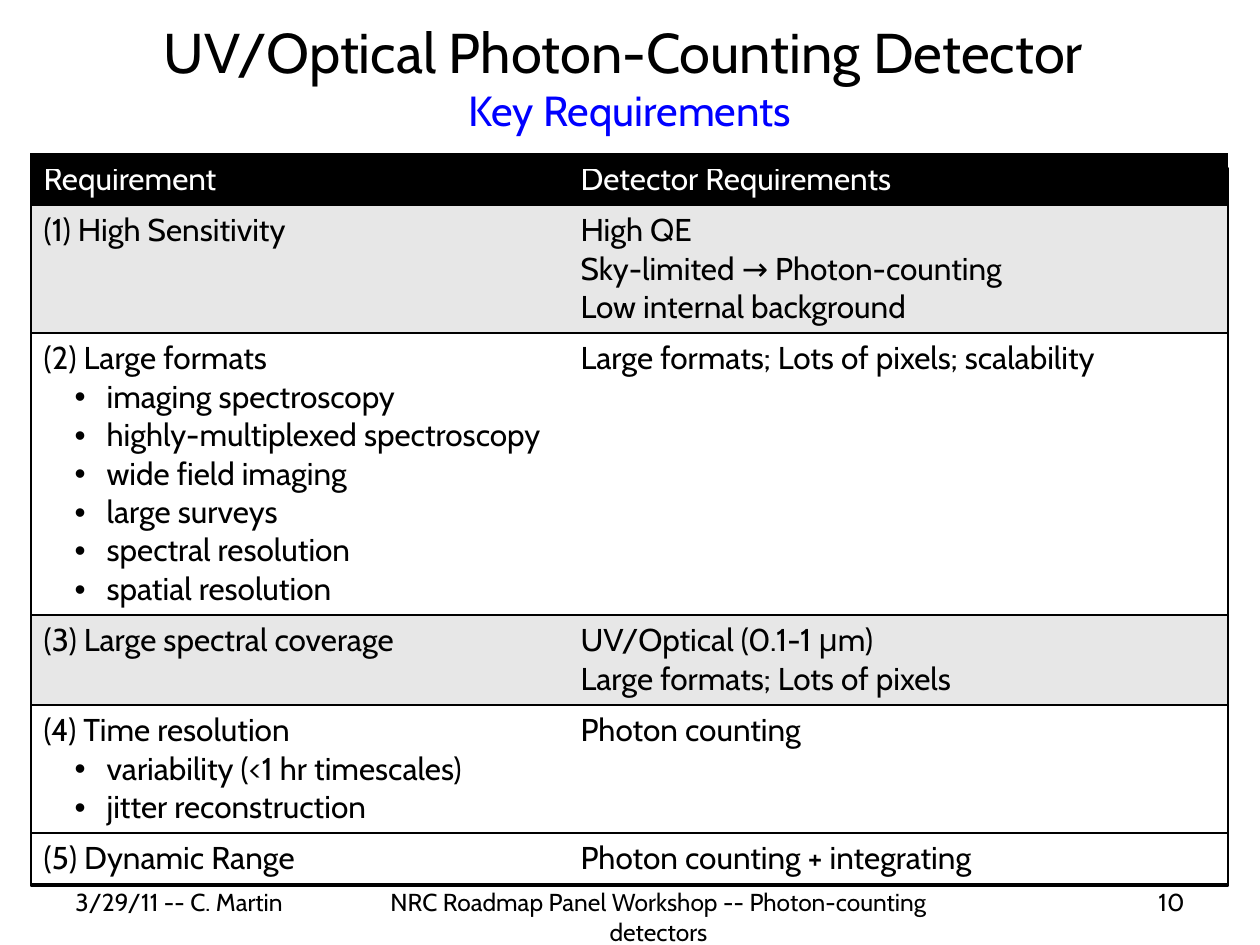
import pptx
import pptx.dml.color
import pptx.enum.shapes
import pptx.enum.text
import pptx.oxml.ns
import pptx.util
import lxml.etree

EMU_PER_PX = 914400 / 126
FONT = "Cabin"
COLORS = {"ink": "000000", "paper": "FFFFFF", "band": "E7E7E7", "accent": "0000FF"}
ALIGN = pptx.enum.text.PP_ALIGN
ANCHOR = pptx.enum.text.MSO_ANCHOR

HEADER = ("Requirement", "Detector Requirements")
# Height, heading, bullets, detector requirements
REQUIREMENTS = [
    (128, "(1) High Sensitivity", [],
     ["High QE", "Sky-limited → Photon-counting", "Low internal background"]),
    (282, "(2) Large formats",
     ["imaging spectroscopy", "highly-multiplexed spectroscopy", "wide field imaging",
      "large surveys", "spectral resolution", "spatial resolution"],
     ["Large formats; Lots of pixels; scalability"]),
    (90, "(3) Large spectral coverage", [],
     ["UV/Optical (0.1-1 μm)", "Large formats; Lots of pixels"]),
    (128, "(4) Time resolution",
     ["variability (<1 hr timescales)", "jitter reconstruction"], ["Photon counting"]),
    (51, "(5) Dynamic Range", [], ["Photon counting + integrating"]),
]


def px(length):
    return pptx.util.Emu(round(length * EMU_PER_PX))


def rgb(name):
    return pptx.dml.color.RGBColor.from_string(COLORS[name])


def add_element(parent, tag, **attributes):
    element = lxml.etree.SubElement(parent, pptx.oxml.ns.qn(tag))
    for name, value in attributes.items():
        element.set(name, str(value))
    return element


def write_text(paragraph, text, size=18, color="ink", align=ALIGN.LEFT, bullet=False):
    paragraph.alignment = align
    run = paragraph.add_run()
    run.text = text
    run.font.name = FONT
    run.font.size = pptx.util.Pt(size)
    run.font.color.rgb = rgb(color)
    if bullet:
        properties = paragraph._p.get_or_add_pPr()
        properties.set("marL", str(px(63)))
        properties.set("indent", str(px(-32)))
        add_element(properties, "a:buFont", typeface="Arial")
        add_element(properties, "a:buChar", char="•")


def add_text_frame(slide, box, anchor=ANCHOR.TOP):
    frame = slide.shapes.add_textbox(*map(px, box)).text_frame
    frame.word_wrap = True
    frame.vertical_anchor = anchor
    return frame


def add_title(slide, box):
    paragraph = add_text_frame(slide, box, ANCHOR.MIDDLE).paragraphs[0]
    write_text(paragraph, "UV/Optical Photon-Counting Detector ", size=32, align=ALIGN.CENTER)
    paragraph.add_line_break()
    write_text(paragraph, "Key Requirements", size=24, color="accent", align=ALIGN.CENTER)


def fill_cell(cell, lines, fill, color="ink", left_border=False):
    """Lines are pairs of text and whether it is a bullet."""
    properties = cell._tc.get_or_add_tcPr()
    for side in "LRTB":
        visible = side in "TB" or (side == "L" and left_border)
        border = add_element(properties, "a:ln" + side, w=pptx.util.Pt(1))
        if visible:
            solid = add_element(border, "a:solidFill")
            add_element(solid, "a:srgbClr", val=COLORS["ink"])
        else:
            add_element(border, "a:noFill")
    cell.fill.solid()
    cell.fill.fore_color.rgb = rgb(fill)
    frame = cell.text_frame
    for index, (text, bullet) in enumerate(lines):
        paragraph = frame.add_paragraph() if index else frame.paragraphs[0]
        write_text(paragraph, text, color=color, bullet=bullet)


def add_requirements_table(slide, box):
    left, top, width, height = box
    table = slide.shapes.add_table(len(REQUIREMENTS) + 1, 2, *map(px, box)).table
    table.first_row = table.horz_banding = False
    first_width = 537
    table.columns[0].width = px(first_width)
    table.columns[1].width = px(width - first_width)

    # Header row
    table.rows[0].height = px(51)
    for column, text in enumerate(HEADER):
        fill_cell(table.cell(0, column), [(text, False)], "ink", "paper", column == 0)

    # Body rows with alternating bands
    for row, (row_height, heading, bullets, needs) in enumerate(REQUIREMENTS, 1):
        table.rows[row].height = px(row_height)
        fill = "band" if row in (1, 3) else "paper"
        topics = [(heading, False)] + [(text, True) for text in bullets]
        fill_cell(table.cell(row, 0), topics, fill, left_border=True)
        fill_cell(table.cell(row, 1), [(text, False) for text in needs], fill)

    # Outline, slightly lower than the table
    outline = slide.shapes.add_shape(
        pptx.enum.shapes.MSO_SHAPE.RECTANGLE, px(left), px(top + 14), px(width), px(718))
    outline.shadow.inherit = False
    outline.fill.background()
    outline.line.color.rgb = rgb("ink")
    outline.line.width = pptx.util.Pt(0.75)


def add_footer(slide, box):
    left, top, width, height = box
    parts = [
        (0, 294, "3/29/11 -- C. Martin", ALIGN.LEFT),
        (294, 603, "NRC Roadmap Panel Workshop -- Photon-counting detectors", ALIGN.CENTER),
        (width - 294, 294, "10", ALIGN.RIGHT),
    ]
    for offset, part_width, text, align in parts:
        frame = add_text_frame(slide, (left + offset, top, part_width, height))
        write_text(frame.paragraphs[0], text, size=14, align=align)


def main():
    presentation = pptx.Presentation()
    presentation.slide_width = px(1260)
    presentation.slide_height = px(945)
    slide = presentation.slides.add_slide(presentation.slide_layouts[6])
    add_title(slide, (63, 21, 1134, 110))
    add_requirements_table(slide, (31, 154, 1197, 730))
    add_footer(slide, (63, 881, 1134, 65))
    presentation.save("out.pptx")


if __name__ == "__main__":
    main()
